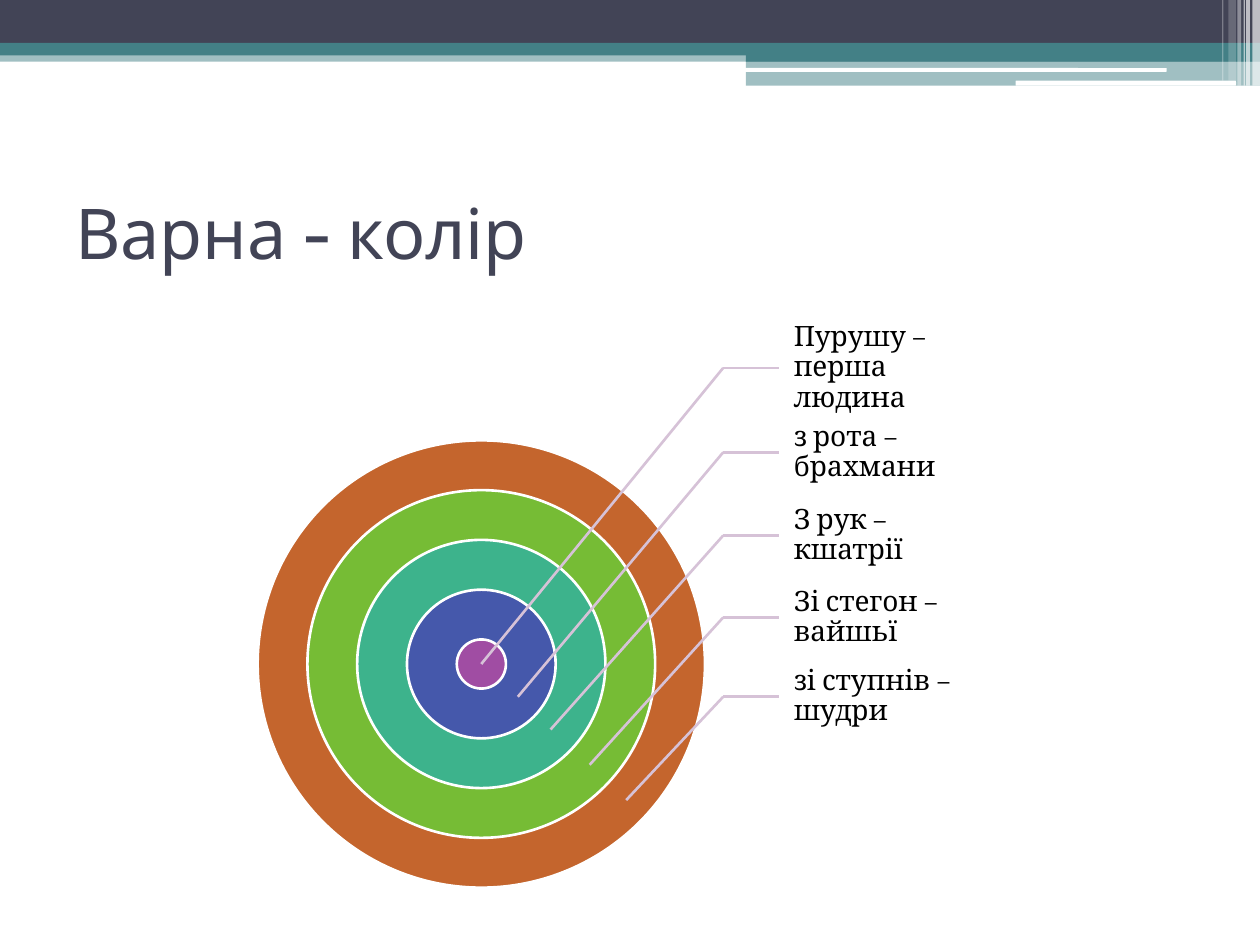
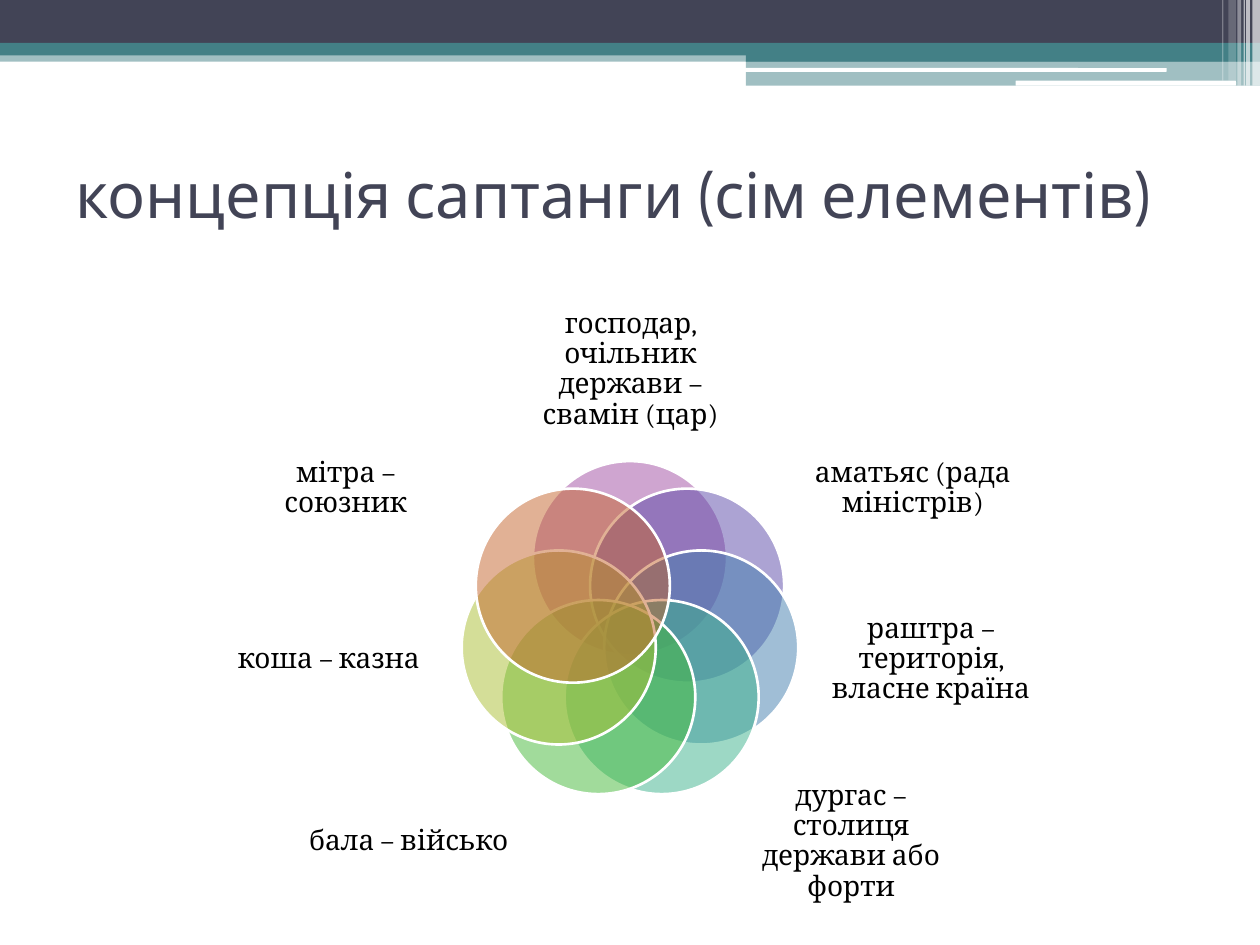
from dataclasses import dataclass
from math import cos, pi, sin

from lxml import etree
from pptx import Presentation
from pptx.dml.color import RGBColor
from pptx.enum.shapes import MSO_CONNECTOR, MSO_SHAPE
from pptx.enum.text import MSO_ANCHOR, PP_ALIGN
from pptx.oxml.ns import qn
from pptx.util import Inches, Pt

RECTANGLE = MSO_SHAPE.RECTANGLE
ROUNDED = MSO_SHAPE.ROUNDED_RECTANGLE
OVAL = MSO_SHAPE.OVAL
STRAIGHT = MSO_CONNECTOR.STRAIGHT
MIDDLE = MSO_ANCHOR.MIDDLE
LEFT, CENTER = PP_ALIGN.LEFT, PP_ALIGN.CENTER
LEFT_SIDE = 1


@dataclass(frozen=True)
class Theme:
    navy: str = "424456"
    teal: str = "438086"
    white: str = "FFFFFF"
    black: str = "000000"
    purple: str = "A04DA3"
    violet: str = "5B48A8"
    indigo: str = "4558AB"
    blue: str = "427FAE"
    sea: str = "3DB38C"
    green: str = "44B938"
    leaf: str = "76BC35"
    lime: str = "ABBE32"
    orange: str = "C4652D"
    leader: str = "D6C2D7"
    title_font: str = "Cabin"
    body_font: str = "Cambria"
    label_size: int = 16
    outline: float = 1.5


theme = Theme()


def add_filled_shape(slide, geometry, box, colour, opacity=100, outlined=False):
    """Add a shape at box (left, top, width, height in inches), opacity in percent."""
    shape = slide.shapes.add_shape(geometry, *map(Inches, box))
    shape.shadow.inherit = False
    shape.fill.solid()
    shape.fill.fore_color.rgb = RGBColor.from_string(colour)
    if opacity < 100:
        colour_element = shape.fill._xPr.find(".//" + qn("a:srgbClr"))
        etree.SubElement(colour_element, qn("a:alpha"), val=str(opacity * 1000))
    if outlined:
        shape.line.color.rgb = RGBColor.from_string(theme.white)
        shape.line.width = Pt(theme.outline)
    else:
        shape.line.fill.background()


def add_text(slide, box, text, font_name, size, colour, margins, alignment=LEFT, spacing=1.0):
    """Add a wrapped, vertically centred text box; margins run left, top, right, bottom."""
    text_box = slide.shapes.add_textbox(*map(Inches, box))
    text_frame = text_box.text_frame
    text_frame.word_wrap = True
    text_frame.vertical_anchor = MIDDLE
    (text_frame.margin_left, text_frame.margin_top,
     text_frame.margin_right, text_frame.margin_bottom) = map(Inches, margins)
    text_frame.text = text
    paragraph = text_frame.paragraphs[0]
    paragraph.alignment = alignment
    paragraph.line_spacing = spacing
    font = paragraph.runs[0].font
    font.name = font_name
    font.size = Pt(size)
    font.color.rgb = RGBColor.from_string(colour)
    return text_box


presentation = Presentation()
presentation.slide_width = Inches(10)
presentation.slide_height = Inches(7.5)
blank_layout = presentation.slide_layouts[6]

# Header bands and titles shared by both slides
header_bands = [
    (RECTANGLE, (0, 0.4, 10, 0.09), theme.teal, 50),
    (RECTANGLE, (0, 0, 10, 0.34), theme.navy, 100),
    (RECTANGLE, (0, 0.34, 10, 0.1), theme.teal, 100),
    (RECTANGLE, (5.92, 0.39, 4.08, 0.1), theme.teal, 100),
    (RECTANGLE, (5.92, 0.48, 4.08, 0.2), theme.teal, 50),
    (ROUNDED, (5.91, 0.54, 3.35, 0.03), theme.white, 100),
    (ROUNDED, (8.06, 0.64, 1.75, 0.04), theme.white, 100),
]
# left, width, height, opacity
corner_stripes = [
    (9.94, 0.06, 0.68, 65), (9.89, 0.03, 0.68, 65), (9.87, 0.01, 0.68, 60),
    (9.82, 0.03, 0.68, 40), (9.75, 0.06, 0.64, 20), (9.7, 0.01, 0.64, 30),
]
titles = [
    ("Варна - колір", 40, 1.25),
    ("концепція саптанги (сім елементів)", 36, 0.95),
]
slides = []
for title, title_size, title_top in titles:
    slide = presentation.slides.add_slide(blank_layout)
    for geometry, box, colour, opacity in header_bands:
        add_filled_shape(slide, geometry, box, colour, opacity)
    for left, width, height, opacity in corner_stripes:
        add_filled_shape(slide, RECTANGLE, (left, 0, width, height), theme.white, opacity)
    add_text(slide, (0.5, title_top, 9, 1.17), title, theme.title_font, title_size,
             theme.navy, (0.1, 0.05, 0.1, 0.05))
    slides.append(slide)
varna_slide, saptanga_slide = slides

# Varna: concentric rings, outermost first
target_x, target_y = 3.82, 5.27
ring_colours = [theme.orange, theme.leaf, theme.sea, theme.indigo, theme.purple]
for index, colour in enumerate(ring_colours):
    diameter = 3.55 - 0.79 * index
    add_filled_shape(varna_slide, OVAL,
                     (target_x - diameter / 2, target_y - diameter / 2, diameter, diameter),
                     colour, outlined=True)

# Label, height of its leader, and the point on the ring it leads to
varna_labels = [
    ("Пурушу – перша людина", 2.92, (3.82, 5.27)),
    ("з рота – брахмани", 3.59, (4.11, 5.53)),
    ("З рук – кшатрії", 4.25, (4.37, 5.79)),
    ("Зі стегон – вайшьї", 4.9, (4.68, 6.07)),
    ("зі ступнів – шудри", 5.53, (4.97, 6.35)),
]
elbow_x, label_left, label_height = 5.74, 6.18, 0.62
for text, leader_y, ring_point in varna_labels:
    label = add_text(varna_slide, (label_left, leader_y - label_height / 2, 1.77, label_height),
                     text, theme.body_font, theme.label_size, theme.black,
                     (0.12, 0.02, 0.02, 0.02), spacing=0.9)
    for end in [(label_left, leader_y), ring_point]:
        leader = varna_slide.shapes.add_connector(
            STRAIGHT, *map(Inches, (elbow_x, leader_y, *end)))
        leader.line.color.rgb = RGBColor.from_string(theme.leader)
        leader.line.width = Pt(theme.outline)
        etree.SubElement(leader._element.spPr, qn("a:effectLst"))
        if end != ring_point:
            leader.end_connect(label, LEFT_SIDE)

# Saptanga: seven overlapping circles, clockwise from the top
wheel_x, wheel_y, wheel_radius, petal_size = 5, 5.01, 0.58, 1.54
saptanga_elements = [
    ("господар, очільник держави – свамін (цар)", theme.purple, (4.12, 2.46, 1.77, 0.95)),
    ("аматьяс (рада міністрів)", theme.violet, (6.41, 3.36, 1.67, 1.04)),
    ("раштра – територія, власне країна", theme.blue, (6.57, 4.68, 1.64, 1.11)),
    ("дургас – столиця держави або форти", theme.sea, (5.87, 6.17, 1.77, 1.02)),
    ("бала – військо", theme.green, (2.36, 6.17, 1.77, 1.02)),
    ("коша – казна", theme.lime, (1.79, 4.68, 1.64, 1.11)),
    ("мітра – союзник", theme.orange, (1.91, 3.36, 1.67, 1.04)),
]
for index, (text, colour, label_box) in enumerate(saptanga_elements):
    angle = 2 * pi * index / len(saptanga_elements)
    petal_left = wheel_x + wheel_radius * sin(angle) - petal_size / 2
    petal_top = wheel_y - wheel_radius * cos(angle) - petal_size / 2
    add_filled_shape(saptanga_slide, OVAL, (petal_left, petal_top, petal_size, petal_size),
                     colour, opacity=50, outlined=True)
    add_text(saptanga_slide, label_box, text, theme.body_font, theme.label_size, theme.black,
             (0, 0, 0, 0), CENTER, 0.9)

presentation.save("out.pptx")
